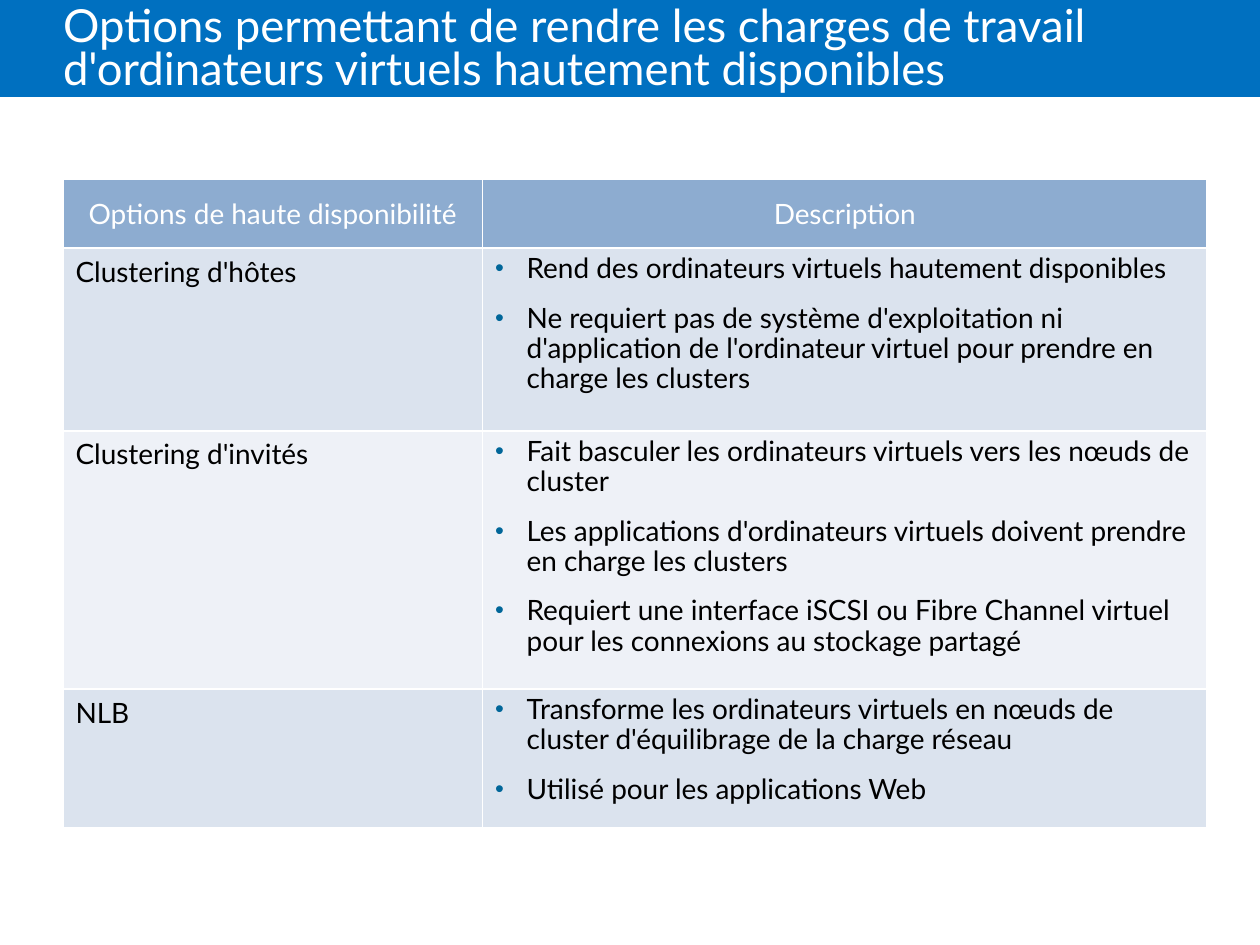
"""Build the slide on high-availability options for virtual machine workloads."""
from lxml.etree import SubElement
from pptx import Presentation
from pptx.dml.color import RGBColor
from pptx.enum.shapes import MSO_SHAPE
from pptx.enum.text import MSO_ANCHOR, MSO_AUTO_SIZE, PP_ALIGN
from pptx.oxml.ns import qn
from pptx.util import Inches, Pt

COLORS = {
    "banner": "0070C0",
    "header": "8DACD0",
    "odd_row": "DBE3EE",
    "even_row": "EEF1F7",
    "bullet": "006699",
    "white": "FFFFFF",
    "black": "000000",
}
FONT = "Lato"
COLUMN_WIDTHS = [3.33, 5.75]
ROW_HEIGHTS = [0.55, 1.45, 2.05, 1.1]
ROWS = [
    ("Options de haute disponibilité", ["Description"]),
    ("Clustering d'hôtes", [
        "Rend des ordinateurs virtuels hautement disponibles",
        "Ne requiert pas de système d'exploitation ni d'application "
        "de l'ordinateur virtuel pour prendre en charge les clusters",
    ]),
    ("Clustering d'invités", [
        "Fait basculer les ordinateurs virtuels vers les nœuds de cluster",
        "Les applications d'ordinateurs virtuels doivent prendre en charge les clusters",
        "Requiert une interface iSCSI ou Fibre Channel virtuel "
        "pour les connexions au stockage partagé",
    ]),
    ("NLB", [
        "Transforme les ordinateurs virtuels en nœuds "
        "de cluster d'équilibrage de la charge réseau",
        "Utilisé pour les applications Web",
    ]),
]


def format_runs(paragraph, size, color):
    for run in paragraph.runs:
        run.font.name = FONT
        run.font.size = Pt(size)
        run.font.bold = False
        run.font.color.rgb = RGBColor.from_string(COLORS[color])


def add_bullet(paragraph):
    paragraph.line_spacing = 0.9
    properties = paragraph._p.get_or_add_pPr()
    properties.set("marL", str(Inches(0.25)))
    properties.set("indent", str(-Inches(0.25)))
    spacing = SubElement(properties, qn("a:spcBef"))
    SubElement(spacing, qn("a:spcPct"), val="70000")
    bullet_color = SubElement(properties, qn("a:buClr"))
    SubElement(bullet_color, qn("a:srgbClr"), val=COLORS["bullet"])
    SubElement(properties, qn("a:buSzPct"), val="90000")
    SubElement(properties, qn("a:buFont"), typeface="Arial")
    SubElement(properties, qn("a:buChar"), char="•")


presentation = Presentation()
presentation.slide_width = Inches(10)
presentation.slide_height = Inches(7.5)
slide = presentation.slides.add_slide(presentation.slide_layouts[5])

title = slide.shapes.title
banner = slide.shapes.add_shape(
    MSO_SHAPE.RECTANGLE, 0, 0, presentation.slide_width, Inches(0.77))
banner.shadow.inherit = False
banner.fill.solid()
banner.fill.fore_color.rgb = RGBColor.from_string(COLORS["banner"])
banner.line.fill.background()
title.element.addprevious(banner.element)

title.left, title.top = Inches(0.5), 0
title.width, title.height = Inches(8.5), Inches(0.81)
title_frame = title.text_frame
title_frame.text = ("Options permettant de rendre les charges de travail "
                    "d'ordinateurs virtuels hautement disponibles")
title_frame.auto_size = MSO_AUTO_SIZE.NONE
title_frame.word_wrap = True
title_frame.vertical_anchor = MSO_ANCHOR.MIDDLE
title_frame.margin_left = 0
title_paragraph = title_frame.paragraphs[0]
title_paragraph.alignment = PP_ALIGN.LEFT
title_paragraph.line_spacing = 0.8
format_runs(title_paragraph, 26, "white")

table = slide.shapes.add_table(
    len(ROWS), len(COLUMN_WIDTHS), Inches(0.5), Inches(1.42),
    Inches(sum(COLUMN_WIDTHS)), Inches(sum(ROW_HEIGHTS))).table
for column, width in zip(table.columns, COLUMN_WIDTHS):
    column.width = Inches(width)
for row, height in zip(table.rows, ROW_HEIGHTS):
    row.height = Inches(height)

for row_index, (option, descriptions) in enumerate(ROWS):
    is_header = row_index == 0
    row_color = "header" if is_header else "odd_row" if row_index % 2 else "even_row"
    for column_index, lines in enumerate([[option], descriptions]):
        cell = table.cell(row_index, column_index)
        cell.text_frame.text = "\n".join(lines)
        cell.vertical_anchor = MSO_ANCHOR.MIDDLE if is_header else MSO_ANCHOR.TOP
        for side in ("lnL", "lnR", "lnT", "lnB"):
            border = SubElement(
                cell._tc.get_or_add_tcPr(), qn(f"a:{side}"), w=str(Pt(1)))
            border_fill = SubElement(border, qn("a:solidFill"))
            SubElement(border_fill, qn("a:srgbClr"), val=COLORS["white"])
        cell.fill.solid()
        cell.fill.fore_color.rgb = RGBColor.from_string(COLORS[row_color])
        for paragraph in cell.text_frame.paragraphs:
            format_runs(paragraph, 16, "white" if is_header else "black")
            if is_header:
                paragraph.alignment = PP_ALIGN.CENTER
            elif column_index == 1:
                add_bullet(paragraph)

presentation.save("out.pptx")
